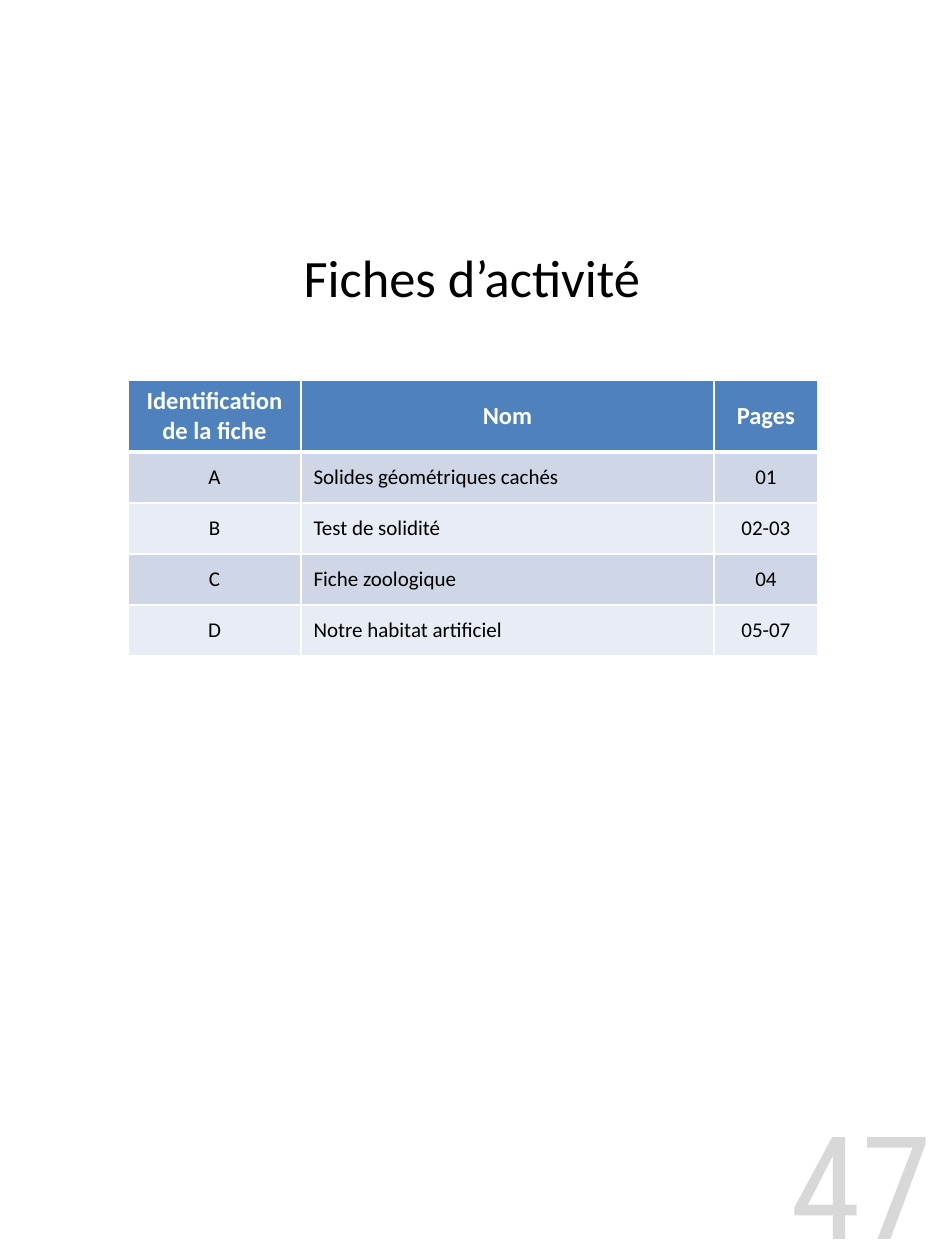
import dataclasses

import lxml.etree
import pptx
import pptx.dml.color
import pptx.enum.text
import pptx.oxml.ns
import pptx.util

PX_PER_INCH = 126
ALIGN = pptx.enum.text.PP_ALIGN
MIDDLE = pptx.enum.text.MSO_ANCHOR.MIDDLE


@dataclasses.dataclass(frozen=True)
class Theme:
    font: str = "Calibri"
    number_font: str = "Roboto Condensed"
    ink: str = "000000"
    white: str = "FFFFFF"
    header: str = "4F81BD"
    bands: tuple = ("CFD7E7", "E8ECF4")
    number: str = "D8D8D8"
    title_size: int = 30
    header_size: int = 14
    body_size: int = 12
    number_size: int = 82


THEME = Theme()

HEADINGS = ("Identification\nde la fiche", "Nom", "Pages")
SHEETS = (
    ("A", "Solides géométriques cachés", "01"),
    ("B", "Test de solidité", "02-03"),
    ("C", "Fiche zoologique", "04"),
    ("D", "Notre habitat artificiel", "05-07"),
)
COLUMN_WIDTHS = (173, 413, 104)
COLUMN_ALIGNS = (ALIGN.CENTER, ALIGN.LEFT, ALIGN.CENTER)
HEADER_HEIGHT = 72


def px(length):
    return pptx.util.Emu(round(length * 914400 / PX_PER_INCH))


def rgb(value):
    return pptx.dml.color.RGBColor.from_string(value)


def write(frame, text, *, size, color=THEME.ink, font=THEME.font,
          bold=False, align=ALIGN.CENTER):
    """Fill a text frame, one paragraph for each line of text."""
    frame.word_wrap = True
    for index, line in enumerate(text.split("\n")):
        para = frame.add_paragraph() if index else frame.paragraphs[0]
        para.alignment = align
        span = para.add_run()
        span.text = line
        span.font.name = font
        span.font.size = pptx.util.Pt(size)
        span.font.bold = bold
        span.font.color.rgb = rgb(color)


def add_text(page, box, text, **style):
    frame = page.shapes.add_textbox(*map(px, box)).text_frame
    frame.vertical_anchor = MIDDLE
    write(frame, text, **style)


def set_borders(cell, top, bottom):
    """Draw white cell borders; top and bottom are widths in points."""
    properties = cell._tc.get_or_add_tcPr()
    for side, width in (("L", 1), ("R", 1), ("T", top), ("B", bottom)):
        line = lxml.etree.SubElement(
            properties, pptx.oxml.ns.qn(f"a:ln{side}"), w=str(pptx.util.Pt(width)))
        fill = lxml.etree.SubElement(line, pptx.oxml.ns.qn("a:solidFill"))
        lxml.etree.SubElement(fill, pptx.oxml.ns.qn("a:srgbClr"), val=THEME.white)


def add_sheet_table(page, box):
    rows = (HEADINGS, *SHEETS)
    table = page.shapes.add_table(len(rows), len(HEADINGS), *map(px, box)).table
    for column, width in zip(table.columns, COLUMN_WIDTHS):
        column.width = px(width)
    body_height = (box[3] - HEADER_HEIGHT) / len(SHEETS)
    for row_index, row in enumerate(rows):
        is_header = row_index == 0
        table.rows[row_index].height = px(HEADER_HEIGHT if is_header else body_height)
        for column_index, text in enumerate(row):
            cell = table.cell(row_index, column_index)
            cell.vertical_anchor = MIDDLE
            set_borders(cell, top=3 if row_index == 1 else 1, bottom=3 if is_header else 1)
            cell.fill.solid()
            if is_header:
                cell.fill.fore_color.rgb = rgb(THEME.header)
                write(cell.text_frame, text, size=THEME.header_size,
                      color=THEME.white, bold=True)
            else:
                cell.fill.fore_color.rgb = rgb(THEME.bands[(row_index - 1) % 2])
                write(cell.text_frame, text, size=THEME.body_size,
                      align=COLUMN_ALIGNS[column_index])


def main():
    deck = pptx.Presentation()
    deck.slide_width, deck.slide_height = px(945), px(1260)
    page = deck.slides.add_slide(deck.slide_layouts[6])
    add_text(page, (730, 1104, 215, 156), "47", size=THEME.number_size,
             font=THEME.number_font, color=THEME.number, align=ALIGN.RIGHT)
    add_sheet_table(page, (128, 380, sum(COLUMN_WIDTHS), 276))
    add_text(page, (178, 217, 588, 120), "Fiches d’activité", size=THEME.title_size)
    deck.save("out.pptx")


if __name__ == "__main__":
    main()
